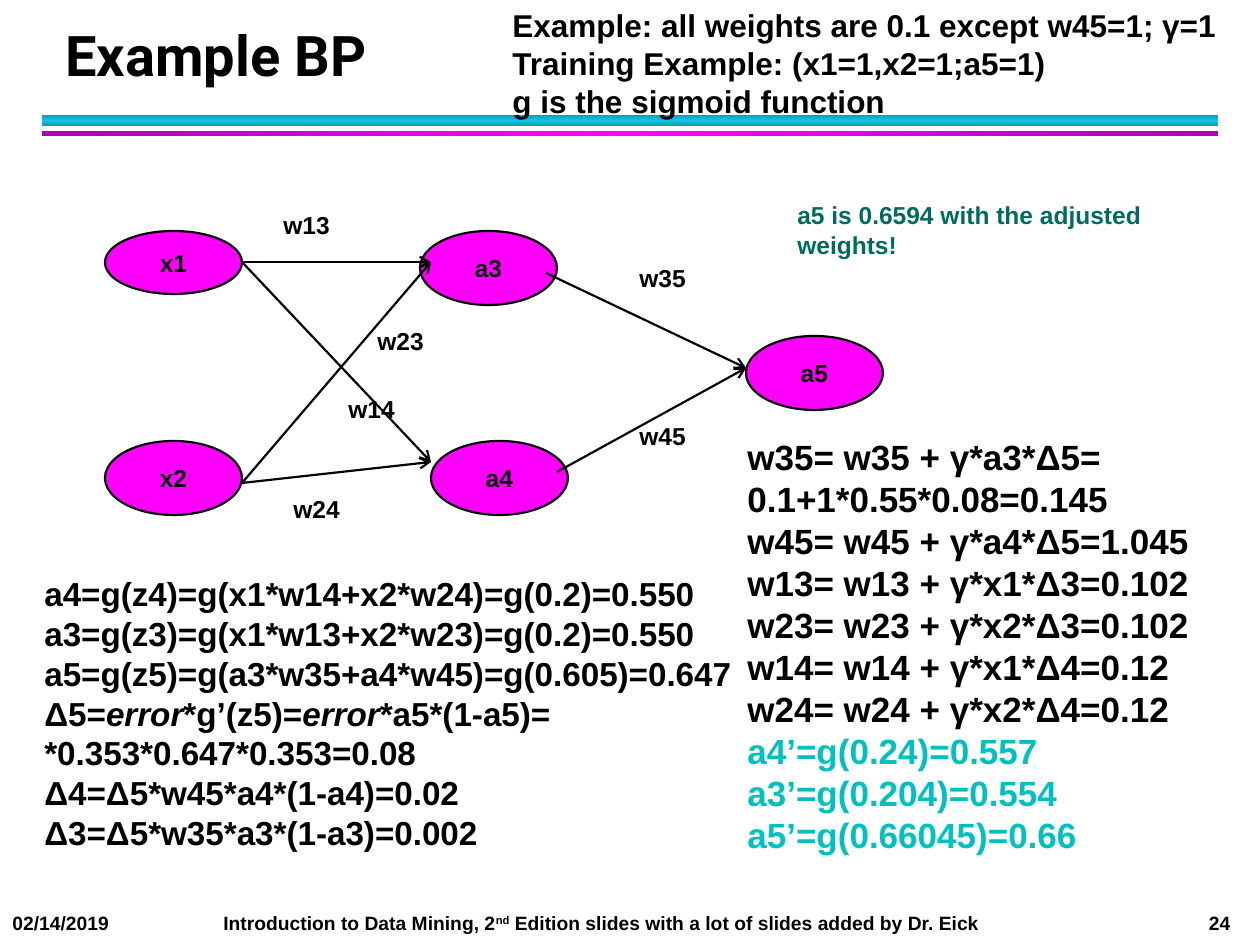
from copy import deepcopy

from lxml import etree
from pptx import Presentation
from pptx.dml.color import RGBColor
from pptx.enum.shapes import MSO_CONNECTOR, MSO_SHAPE
from pptx.enum.text import MSO_ANCHOR, PP_ALIGN
from pptx.oxml.ns import qn
from pptx.util import Pt

PX = 914400 // 126
OVAL, BAR, STRAIGHT = MSO_SHAPE.OVAL, MSO_SHAPE.RECTANGLE, MSO_CONNECTOR.STRAIGHT
TOP, MIDDLE, BOTTOM = MSO_ANCHOR.TOP, MSO_ANCHOR.MIDDLE, MSO_ANCHOR.BOTTOM
LEFT, CENTER = PP_ALIGN.LEFT, PP_ALIGN.CENTER

COLORS = {
    "ink": "000000", "neuron": "FF00FF", "result": "00C0C0", "remark": "006B61",
    "cyan_edge": "0E9BBA", "cyan": "12C2E9",
    "magenta_edge": "B200B2", "magenta": "FF00FF",
}
NEURONS = [
    ("x1", 105, 231, 63), ("x2", 105, 441, 74), ("a3", 420, 231, 74),
    ("a4", 431, 441, 74), ("a5", 746, 336, 74),
]
SYNAPSES = [
    (242, 262, 431, 262), (242, 262, 431, 462), (242, 483, 431, 262),
    (242, 483, 431, 462), (546, 273, 746, 368), (557, 472, 746, 368),
]
WEIGHTS = [
    ("w13", 271, 204), ("w23", 365, 320), ("w14", 336, 388),
    ("w24", 281, 488), ("w45", 627, 415), ("w35", 627, 257),
]
ITALIC = {"italic": True}
FORWARD_PASS = [
    "a4=g(z4)=g(x1*w14+x2*w24)=g(0.2)=0.550",
    "a3=g(z3)=g(x1*w13+x2*w23)=g(0.2)=0.550",
    "a5=g(z5)=g(a3*w35+a4*w45)=g(0.605)=0.647",
    [("Δ5=", {}), ("error", ITALIC), ("*g’(z5)=", {}), ("error", ITALIC),
     ("*a5*(1-a5)=", {})],
    "*0.353*0.647*0.353=0.08",
    "Δ4=Δ5*w45*a4*(1-a4)=0.02",
    "Δ3=Δ5*w35*a3*(1-a3)=0.002",
]
UPDATES = [
    "w35= w35 + γ*a3*Δ5=",
    "0.1+1*0.55*0.08=0.145",
    "w45= w45 + γ*a4*Δ5=1.045",
    "w13= w13 + γ*x1*Δ3=0.102",
    "w23= w23 + γ*x2*Δ3=0.102",
    "w14= w14 + γ*x1*Δ4=0.12",
    "w24= w24 + γ*x2*Δ4=0.12",
]
NEW_ACTIVATIONS = ["a4’=g(0.24)=0.557", "a3’=g(0.204)=0.554", "a5’=g(0.66045)=0.66"]
SETUP = [
    "Example: all weights are 0.1 except w45=1; γ=1 Training Example: (x1=1,x2=1;a5=1)",
    "g is the sigmoid function",
]
REMARK = ["a5 is 0.6594 with the adjusted", "weights!"]
FOOTER = [
    ("02/14/2019\tIntroduction to Data Mining, 2", {}),
    ("nd", {"baseline": 30000}),
    (" Edition slides with a lot of slides added by Dr. Eick\t24", {}),
]


def rgb(name):
    """Return the named colour."""
    return RGBColor.from_string(COLORS[name])


def px(*lengths):
    """Turn pixel lengths into EMU."""
    return [length * PX for length in lengths]


def add_run(paragraph, text, size, color, font, italic=False, baseline=None):
    """Append one bold run to a paragraph."""
    run = paragraph.add_run()
    run.text = text
    run.font.name, run.font.size = font, Pt(size)
    run.font.bold, run.font.italic = True, italic
    run.font.color.rgb = rgb(color)
    if baseline:
        run.font._element.set("baseline", str(baseline))


def write(shape, lines, size=14, color="ink", font="Arial", align=LEFT,
          anchor=TOP, wrap=False, spacing=None):
    """Fill a shape with lines, each a string or a list of formatted pieces."""
    frame = shape.text_frame
    frame.word_wrap, frame.vertical_anchor = wrap, anchor
    for index, line in enumerate(lines):
        paragraph = frame.add_paragraph() if index else frame.paragraphs[0]
        paragraph.alignment = align
        if spacing:
            paragraph.line_spacing = Pt(spacing)
        for text, changes in [(line, {})] if isinstance(line, str) else line:
            add_run(paragraph, text, **{"size": size, "color": color, "font": font, **changes})


def add_text(slide, box, lines, **style):
    """Add a text box and return it."""
    label = slide.shapes.add_textbox(*px(*box))
    write(label, lines, **style)
    return label


def add_band(slide, box, edge, middle, angle):
    """Add a bar whose gradient runs from edge to middle to edge."""
    band = slide.shapes.add_shape(BAR, *px(*box))
    band.shadow.inherit = False
    band.line.fill.background()
    band.fill.gradient()
    band.fill.gradient_angle = angle
    stop_list = next(band._element.iter(qn("a:gsLst")))
    stop_list.append(deepcopy(stop_list[0]))
    for stop, name, position in zip(band.fill.gradient_stops, (edge, middle, edge), (0, 0.5, 1)):
        stop.color.rgb, stop.position = rgb(name), position


def add_neuron(slide, name, left, top, height):
    """Add a labelled network node."""
    neuron = slide.shapes.add_shape(OVAL, *px(left, top, 137, height))
    neuron.shadow.inherit = False
    neuron.fill.solid()
    neuron.fill.fore_color.rgb = rgb("neuron")
    neuron.line.color.rgb, neuron.line.width = rgb("ink"), Pt(1.25)
    write(neuron, [name], align=CENTER, anchor=MIDDLE)


def add_synapse(slide, ends):
    """Add an arrow between two nodes."""
    synapse = slide.shapes.add_connector(STRAIGHT, *px(*ends))
    synapse.line.color.rgb, synapse.line.width = rgb("ink"), Pt(1.25)
    etree.SubElement(synapse.line._get_or_add_ln(), qn("a:tailEnd"), type="arrow")
    etree.SubElement(synapse._element.spPr, qn("a:effectLst"))


def add_footer(slide):
    """Add the date, book and page line, set out with tab stops."""
    footer = add_text(slide, (0, 905, 1250, 36), [FOOTER], size=11, wrap=True)
    properties = footer.text_frame.paragraphs[0]._p.get_or_add_pPr()
    tabs = etree.SubElement(properties, qn("a:tabLst"))
    for position, align in ((211, "l"), (1218, "r")):
        etree.SubElement(tabs, qn("a:tab"), pos=str(position * PX), algn=align)


def main():
    """Build the backpropagation example slide."""
    deck = Presentation()
    deck.slide_width, deck.slide_height = px(1260, 945)
    slide = deck.slides.add_slide(deck.slide_layouts[6])

    add_band(slide, (42, 115, 1176, 11), "cyan_edge", "cyan", 90)
    add_band(slide, (42, 131, 1176, 5), "magenta_edge", "magenta", 0)
    add_footer(slide)
    add_text(slide, (53, 21, 1142, 73), ["Example BP"], size=32, font="Roboto",
             anchor=BOTTOM, wrap=True, spacing=36)

    for neuron in NEURONS:
        add_neuron(slide, *neuron)
    for ends in SYNAPSES:
        add_synapse(slide, ends)
    for name, left, top in WEIGHTS:
        add_text(slide, (left, top, 79, 50), [name])

    add_text(slide, (32, 567, 723, 335), FORWARD_PASS, size=19)
    activations = [[(line, {"color": "result"})] for line in NEW_ACTIVATIONS]
    add_text(slide, (735, 429, 525, 479), UPDATES + activations, size=20, wrap=True)
    add_text(slide, (500, 0, 766, 127), SETUP, size=18, wrap=True)
    add_text(slide, (785, 194, 428, 88), REMARK, color="remark")
    deck.save("out.pptx")


if __name__ == "__main__":
    main()
